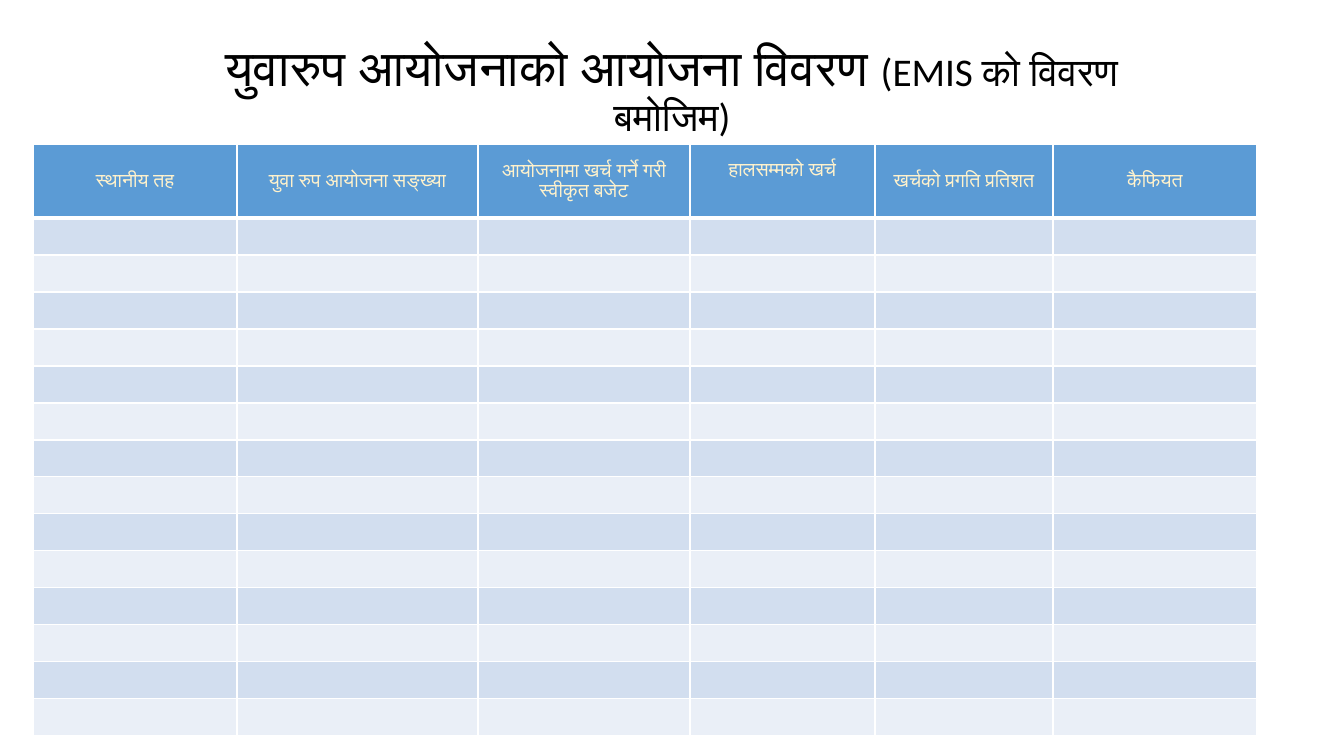
from lxml import etree
from pptx import Presentation
from pptx.dml.color import RGBColor
from pptx.enum.text import MSO_ANCHOR, PP_ALIGN
from pptx.oxml.ns import qn
from pptx.util import Emu, Pt

PX = 914400 / 100.8
CENTER = PP_ALIGN.CENTER
MIDDLE, BOTTOM = MSO_ANCHOR.MIDDLE, MSO_ANCHOR.BOTTOM

HEADINGS = [
    "स्थानीय तह",
    "युवा रुप आयोजना सङ्ख्या",
    "आयोजनामा खर्च गर्ने गरी स्वीकृत बजेट",
    "हालसम्मको खर्च",
    "खर्चको प्रगति प्रतिशत",
    "कैफियत",
]
COLUMN_WIDTHS = [204, 241, 212, 185, 178, 204]
HEADER_HEIGHT, ROW_HEIGHT, BODY_ROWS = 74, 37, 14
SPENT_COLUMN = 3


def px(length):
    return Emu(round(length * PX))


def color(hex_string):
    return RGBColor.from_string(hex_string)


class ProjectSlide:
    title_font, header_font = "Calibri", "Lato"
    black, white, cream = "000000", "FFFFFF", "FFF2CC"
    header_fill, bands = "5B9BD5", ("D2DEEF", "EAEFF7")

    def __init__(self, presentation):
        self.slide = presentation.slides.add_slide(presentation.slide_layouts[6])

    def title(self, left, top, width, height, parts):
        """Add a centred title from (text, point size) parts."""
        box = self.slide.shapes.add_textbox(px(left), px(top), px(width), px(height))
        frame = box.text_frame
        frame.word_wrap = True
        frame.vertical_anchor = BOTTOM
        paragraph = frame.paragraphs[0]
        paragraph.alignment = CENTER
        paragraph.line_spacing = 0.9
        paragraph.font.name = self.title_font
        paragraph.font.color.rgb = color(self.black)
        for text, size in parts:
            run = paragraph.add_run()
            run.text = text
            run.font.size = Pt(size)

    def borders(self, cell, bottom):
        """Draw white cell borders, 1 pt except for the bottom one."""
        properties = cell._tc.get_or_add_tcPr()
        widths = {"a:lnL": 1, "a:lnR": 1, "a:lnT": 1, "a:lnB": bottom}
        for position, (tag, width) in enumerate(widths.items()):
            line = etree.Element(qn(tag), w=str(Pt(width)))
            fill = etree.SubElement(line, qn("a:solidFill"))
            etree.SubElement(fill, qn("a:srgbClr"), val=self.white)
            properties.insert(position, line)

    def cell(self, cell, fill, bottom=1):
        """Fill and frame a cell, with no vertical margins to stretch its row."""
        cell.fill.solid()
        cell.fill.fore_color.rgb = color(fill)
        cell.margin_top = cell.margin_bottom = px(0)
        self.borders(cell, bottom)

    def heading(self, cell, text, bottom_margin):
        self.cell(cell, self.header_fill, bottom=3)
        cell.text = text
        cell.vertical_anchor = MIDDLE
        cell.margin_left = cell.margin_right = cell.margin_top = px(1)
        cell.margin_bottom = px(bottom_margin)
        paragraph = cell.text_frame.paragraphs[0]
        paragraph.alignment = CENTER
        paragraph.font.name = self.header_font
        paragraph.font.size = Pt(14)
        paragraph.font.bold = False
        paragraph.font.color.rgb = color(self.cream)

    def table(self, left, top):
        height = HEADER_HEIGHT + BODY_ROWS * ROW_HEIGHT
        table = self.slide.shapes.add_table(
            BODY_ROWS + 1, len(HEADINGS), px(left), px(top),
            px(sum(COLUMN_WIDTHS)), px(height)).table
        for column, width in zip(table.columns, COLUMN_WIDTHS):
            column.width = px(width)
        for index, row in enumerate(table.rows):
            row.height = px(ROW_HEIGHT if index else HEADER_HEIGHT)
            for column, cell in enumerate(row.cells):
                if index:
                    self.cell(cell, self.bands[(index - 1) % 2])
                else:
                    self.heading(cell, HEADINGS[column],
                                 22 if column == SPENT_COLUMN else 0)


def main():
    presentation = Presentation()
    presentation.slide_width, presentation.slide_height = px(1344), px(756)
    project = ProjectSlide(presentation)
    project.title(168, 124, 1008, 21, [
        ("युवारुप आयोजनाको आयोजना विवरण ", 36),
        ("(EMIS को विवरण बमोजिम)", 28),
    ])
    project.table(33, 144)
    presentation.save("out.pptx")


if __name__ == "__main__":
    main()
